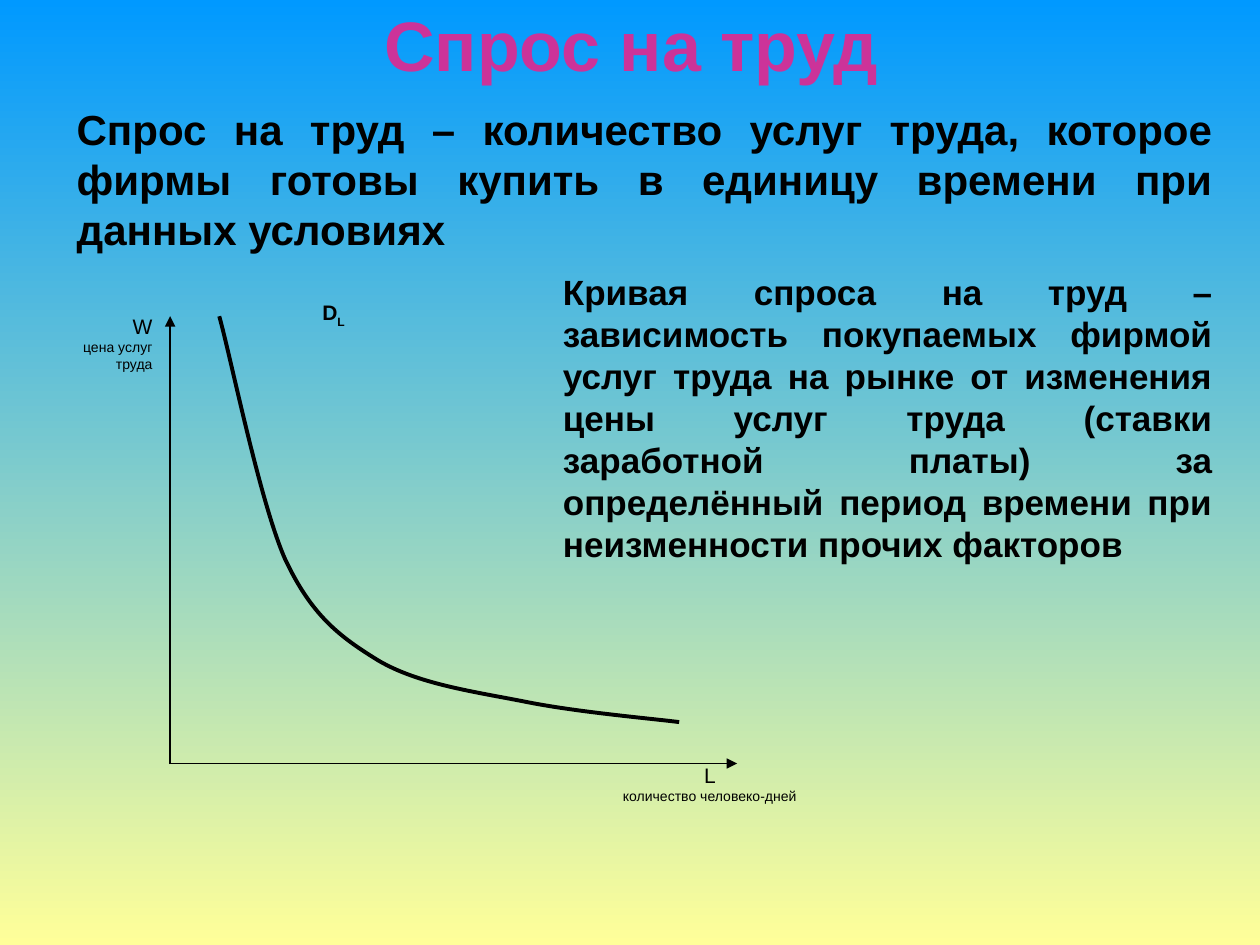
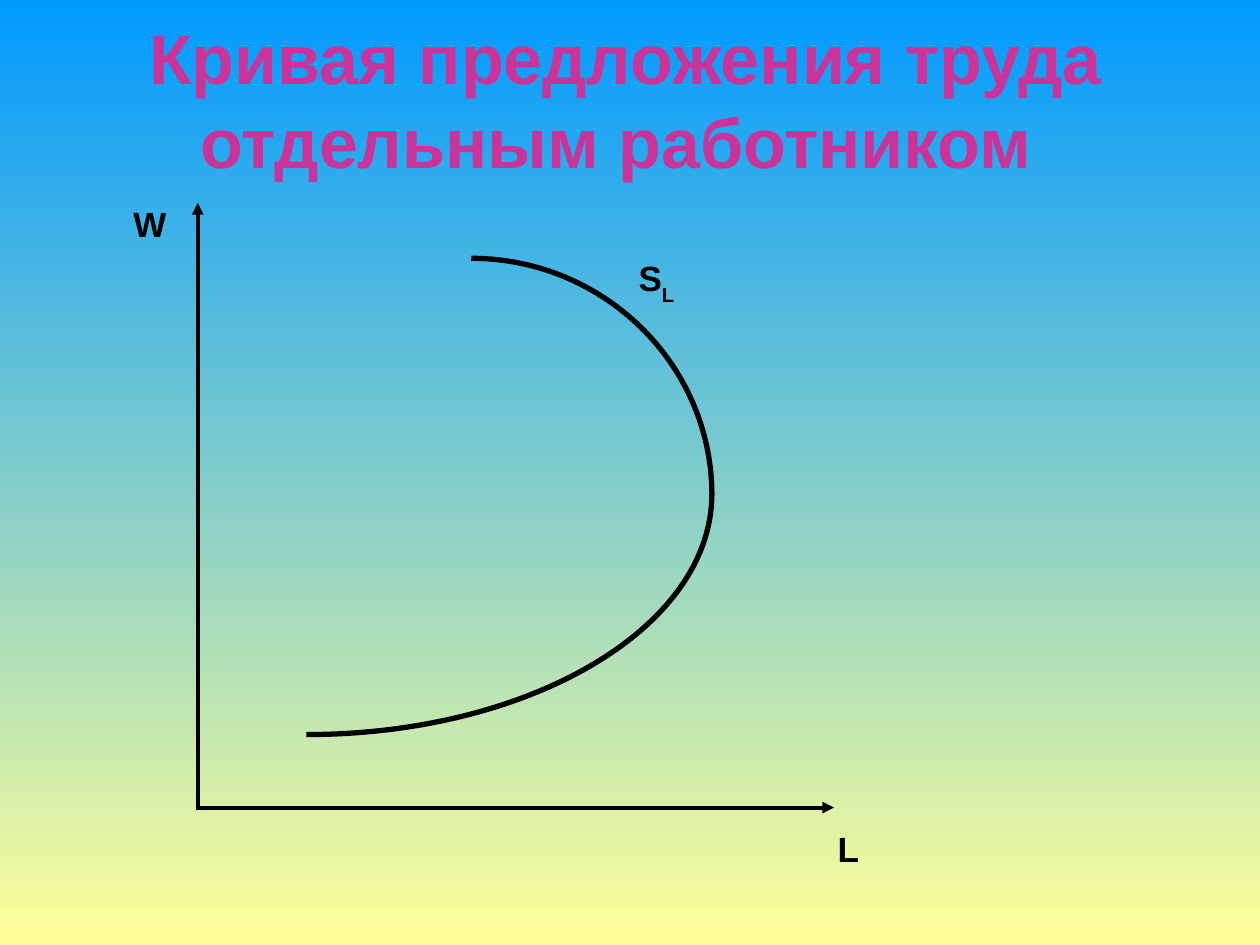
from lxml import etree
from pptx import Presentation
from pptx.dml.color import RGBColor
from pptx.enum.shapes import MSO_CONNECTOR
from pptx.enum.text import MSO_ANCHOR, PP_ALIGN
from pptx.oxml.ns import qn
from pptx.util import Pt

BLACK = RGBColor(0x00, 0x00, 0x00)
MAGENTA = RGBColor(0xCC, 0x33, 0x99)
SKY = RGBColor(0x00, 0x99, 0xFF)
SAND = RGBColor(0xFF, 0xFF, 0x99)
FONT = "Arial"
STRAIGHT = MSO_CONNECTOR.STRAIGHT
TOP, MIDDLE = MSO_ANCHOR.TOP, MSO_ANCHOR.MIDDLE
LEFT, CENTER, RIGHT = PP_ALIGN.LEFT, PP_ALIGN.CENTER, PP_ALIGN.RIGHT
JUSTIFY = PP_ALIGN.JUSTIFY


def add_text(s, text, box, size=20, bold=True, color=BLACK, align=LEFT,
             anchor=TOP, sub="", drop=-30, note=""):
    tf = s.shapes.add_textbox(*map(Pt, box)).text_frame
    tf.word_wrap = True
    tf.vertical_anchor = anchor
    p = tf.paragraphs[0]
    runs = [(p, text, size, 0)]
    if sub:
        runs.append((p, sub, size, drop))
    if note:
        runs.append((tf.add_paragraph(), note, 8, 0))
    for p, words, points, shift in runs:
        p.alignment = align
        r = p.add_run()
        r.text = words
        r.font.name = FONT
        r.font.size = Pt(points)
        r.font.bold = bold
        r.font.color.rgb = color
        if shift:
            r._r.get_or_add_rPr().set("baseline", str(shift * 1000))


prs = Presentation()
prs.slide_width, prs.slide_height = Pt(720), Pt(540)
fill = prs.slide_master.background.fill
fill.gradient()
fill.gradient_angle = 270
for stop, color, position in zip(fill.gradient_stops, (SKY, SAND), (0, 1)):
    stop.color.rgb = color
    stop.position = position

blank = prs.slide_layouts[6]
demand = prs.slides.add_slide(blank)
supply = prs.slides.add_slide(blank)

titles = [
    (demand, "Спрос на труд", (36.7, 0, 648, 49.7)),
    (supply, "Кривая предложения труда отдельным работником ",
     (24.5, 0, 666, 112.3)),
]
for s, title, box in titles:
    add_text(s, title, box, size=40, color=MAGENTA, align=CENTER, anchor=MIDDLE)

axes = [
    (demand, (97.2, 436.3), 180.7, 421.2, 0.75),
    (supply, (113, 461.5), 115.9, 476.6, 2.25),
]
for s, (x, y), top, right, width in axes:
    for start, end in [((x, y + width / 2), (x, top)), ((x, y), (right, y))]:
        axis = s.shapes.add_connector(STRAIGHT, *map(Pt, start + end))
        axis.line.color.rgb = BLACK
        axis.line.width = Pt(width)
        etree.SubElement(axis.line._get_or_add_ln(), qn("a:tailEnd"), type="triangle")
        etree.SubElement(axis._element.spPr, qn("a:effectLst"))

curves = [
    (demand, 2.25, [
        (125.3, 180.7), (131.8, 203.8), (148.3, 285.8), (162.7, 319),
        (177.8, 351.4), (193.7, 363.6), (216, 377.3),
        (239, 391), (271.4, 395.3), (300.2, 401),
        (329, 406.8), (370.1, 410.4), (388.1, 412.6)]),
    (supply, 3, [(175, 419.8), (303.1, 419.8), (406.8, 358.6), (406.8, 282.2)]),
    (supply, 3, [(269.3, 147.6), (344.9, 147.6), (406.8, 208.1), (406.8, 283)]),
]
for s, width, points in curves:
    start, *rest = [(Pt(x), Pt(y)) for x, y in points]
    builder = s.shapes.build_freeform(*start)
    builder.add_line_segments(rest, close=False)
    curve = builder.convert_to_shape()
    curve.shadow.inherit = False
    curve.fill.background()
    curve.line.color.rgb = BLACK
    curve.line.width = Pt(width)
    segments = list(curve._element.iter(qn("a:lnTo")))
    for i in range(0, len(segments), 3):
        bezier = etree.Element(qn("a:cubicBezTo"))
        segments[i].addprevious(bezier)
        for segment in segments[i:i + 3]:
            bezier.append(segment[0])
            segment.getparent().remove(segment)

add_text(demand, "W", (19.4, 175.7, 74.9, 77.8), size=12, bold=False,
         align=RIGHT, note="цена услуг труда")
add_text(demand, "L", (343.4, 432, 124.6, 82.8), size=12, bold=False,
         align=CENTER, note="количество человеко-дней")
add_text(demand, "D", (177.1, 167.8, 53.3, 31), size=12, sub="L", drop=-25)
add_text(demand, "Спрос на труд – количество услуг труда, которое фирмы готовы "
         "купить в единицу времени при данных условиях",
         (36.7, 55.4, 663.1, 93.6), size=24, align=JUSTIFY, anchor=MIDDLE)
add_text(demand, "Кривая спроса на труд – зависимость покупаемых фирмой услуг "
         "труда на рынке от изменения цены услуг труда (ставки заработной "
         "платы) за определённый период времени при неизменности прочих факторов",
         (314.6, 151.2, 385.2, 175), align=JUSTIFY, anchor=MIDDLE)

add_text(supply, "W", (69.1, 112.3, 38.9, 38.9))
add_text(supply, "L", (471.6, 469.4, 40.3, 37.4))
add_text(supply, "S", (357.8, 143.3, 63.4, 41), sub="L")

prs.save("out.pptx")
